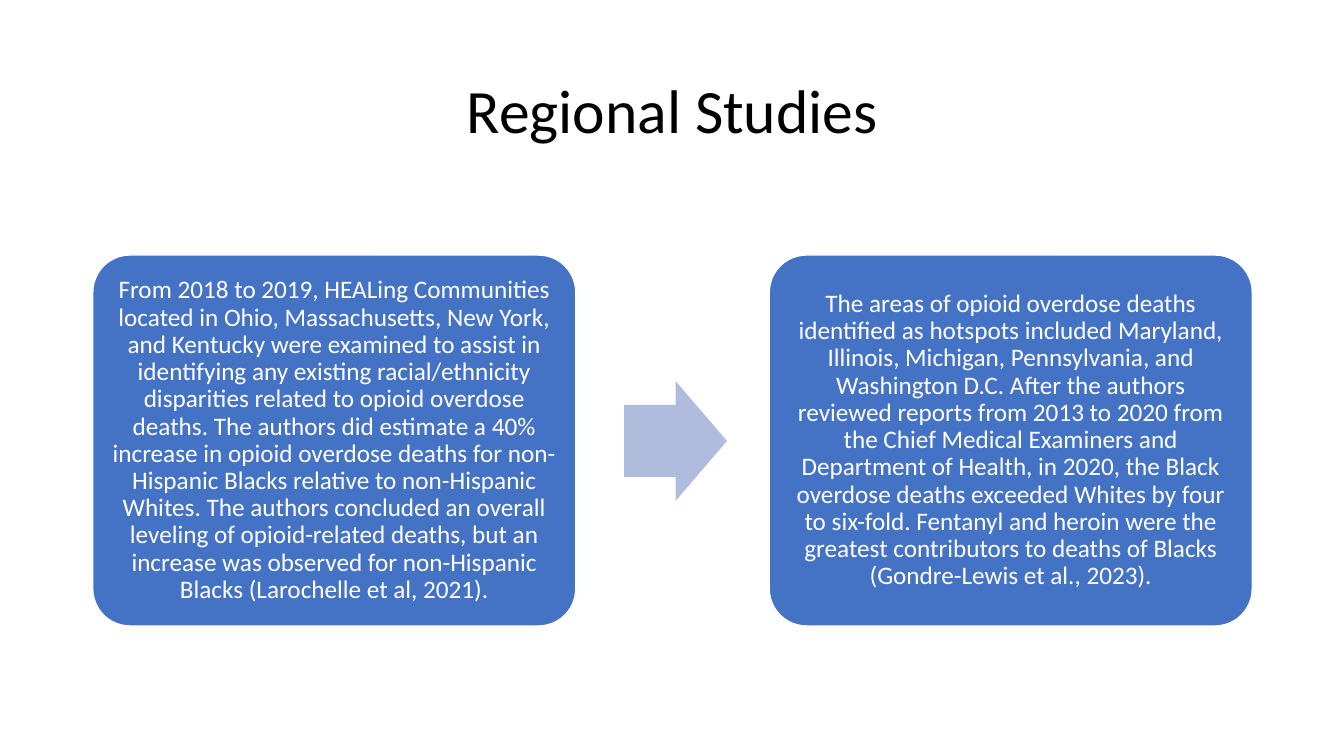
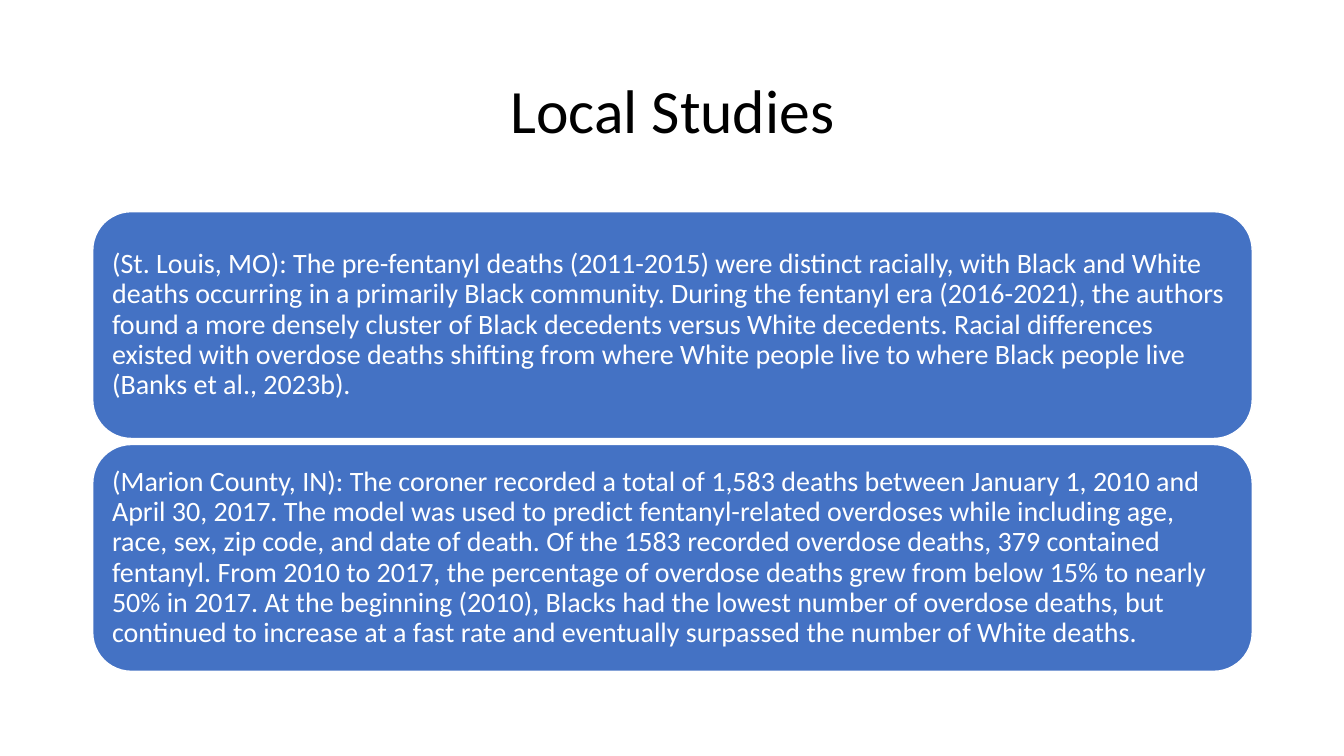
from pptx import Presentation
from pptx.dml.color import RGBColor
from pptx.enum.shapes import MSO_SHAPE
from pptx.enum.text import MSO_ANCHOR, PP_ALIGN
from pptx.util import Pt

PX = 9144  # EMU; 100 px to the inch
WHITE = RGBColor(0xFF, 0xFF, 0xFF)
BLACK = RGBColor(0x00, 0x00, 0x00)
BLUE = RGBColor(0x44, 0x72, 0xC4)
PALE = RGBColor(0xB0, 0xBC, 0xDE)
FONT = "Calibri"

LEFT, WIDTH = 92, 1150

REGIONS = [
    "From 2018 to 2019, HEALing Communities located in Ohio, Massachusetts, "
    "New York, and Kentucky were examined to assist in identifying any existing "
    "racial/ethnicity disparities related to opioid overdose deaths. The authors "
    "did estimate a 40% increase in opioid overdose deaths for non-Hispanic Blacks "
    "relative to non-Hispanic Whites. The authors concluded an overall leveling of "
    "opioid-related deaths, but an increase was observed for non-Hispanic Blacks "
    "(Larochelle et al, 2021).",
    "The areas of opioid overdose deaths identified as hotspots included Maryland, "
    "Illinois, Michigan, Pennsylvania, and Washington D.C. After the authors "
    "reviewed reports from 2013 to 2020 from the Chief Medical Examiners and "
    "Department of Health, in 2020, the Black overdose deaths exceeded Whites by "
    "four to six-fold. Fentanyl and heroin were the greatest contributors to deaths "
    "of Blacks (Gondre-Lewis et al., 2023).",
]
LOCALS = [
    "(St. Louis, MO): The pre-fentanyl deaths (2011-2015) were distinct racially, "
    "with Black and White deaths occurring in a primarily Black community. During "
    "the fentanyl era (2016-2021), the authors found a more densely cluster of "
    "Black decedents versus White decedents. Racial differences existed with "
    "overdose deaths shifting from where White people live to where Black people "
    "live (Banks et al., 2023b).",
    "(Marion County, IN): The coroner recorded a total of 1,583 deaths between "
    "January 1, 2010 and April 30, 2017. The model was used to predict "
    "fentanyl-related overdoses while including age, race, sex, zip code, and date "
    "of death. Of the 1583 recorded overdose deaths, 379 contained fentanyl. From "
    "2010 to 2017, the percentage of overdose deaths grew from below 15% to nearly "
    "50% in 2017. At the beginning (2010), Blacks had the lowest number of overdose "
    "deaths, but continued to increase at a fast rate and eventually surpassed the "
    "number of White deaths.",
]


def scale(*lengths):
    return [n * PX for n in lengths]


def write(shape, words, size, color=WHITE, align=PP_ALIGN.CENTER, inset=7):
    frame = shape.text_frame
    frame.word_wrap = True
    frame.vertical_anchor = MSO_ANCHOR.MIDDLE
    frame.margin_left = frame.margin_right = inset * PX
    frame.margin_top = frame.margin_bottom = inset * PX
    para = frame.paragraphs[0]
    para.alignment = align
    para.line_spacing = 0.9
    run = para.add_run()
    run.text = words
    run.font.name = FONT
    run.font.size = Pt(size)
    run.font.color.rgb = color


def add_shape(slide, kind, box, fill, line=None):
    shape = slide.shapes.add_shape(kind, *scale(*box))
    shape.shadow.inherit = False
    shape.fill.solid()
    shape.fill.fore_color.rgb = fill
    if line is None:
        shape.line.fill.background()
    else:
        shape.line.color.rgb = line
        shape.line.width = Pt(1)
    return shape


def add_card(slide, box, words, size, round_by, **style):
    card = add_shape(slide, MSO_SHAPE.ROUNDED_RECTANGLE, box, BLUE, WHITE)
    card.adjustments[0] = round_by
    write(card, words, size, **style)


def add_slide(deck, title):
    slide = deck.slides.add_slide(deck.slide_layouts[6])
    box = slide.shapes.add_textbox(*scale(LEFT, 40, WIDTH, 145))
    write(box, title, 44, color=BLACK)
    return slide


def add_regions(deck):
    slide = add_slide(deck, "Regional Studies")
    top, wide, high = 253, 479, 368
    step = WIDTH - wide
    for i, words in enumerate(REGIONS):
        add_card(slide, (LEFT + i * step, top, wide, high), words, 18, 0.1)
    tall = 119
    box = (LEFT + wide + 48, top + (high - tall) // 2 + 1, 102, tall)
    arrow = add_shape(slide, MSO_SHAPE.RIGHT_ARROW, box, PALE)
    arrow.adjustments[0] = 0.6
    arrow.adjustments[1] = 0.5


def add_locals(deck):
    slide = add_slide(deck, "Local Studies")
    top, high, gap = 210, 225, 6
    for i, words in enumerate(LOCALS):
        box = (LEFT, top + i * (high + gap), WIDTH, high)
        add_card(slide, box, words, 20, 0.17, align=PP_ALIGN.LEFT, inset=8)


def main():
    deck = Presentation()
    deck.slide_width, deck.slide_height = scale(1333, 750)
    add_regions(deck)
    add_locals(deck)
    deck.save("out.pptx")


if __name__ == "__main__":
    main()
